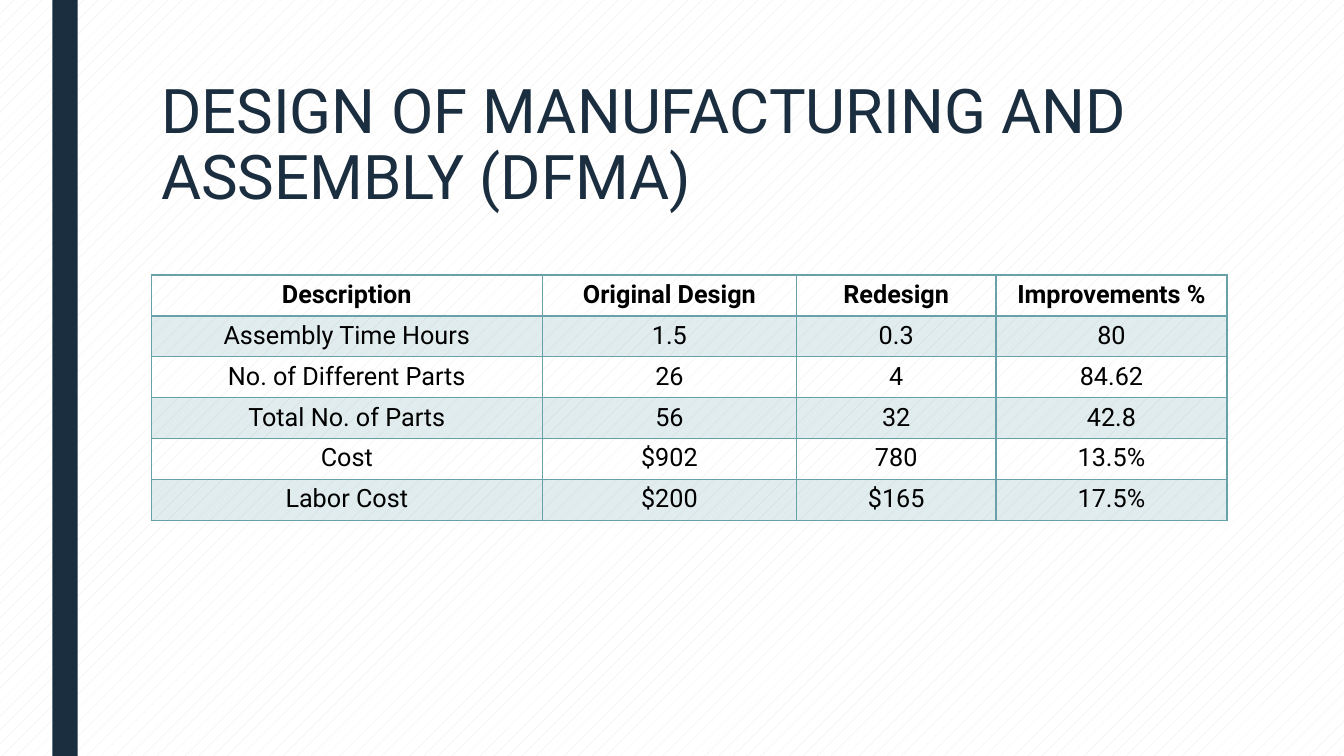
from lxml import etree
from pptx import Presentation
from pptx.dml.color import RGBColor
from pptx.enum.dml import MSO_PATTERN
from pptx.enum.shapes import MSO_SHAPE
from pptx.enum.text import MSO_ANCHOR, MSO_AUTO_SIZE, PP_ALIGN
from pptx.oxml.ns import qn
from pptx.util import Cm, Pt

# Content
TITLE = "DESIGN OF MANUFACTURING AND ASSEMBLY (DFMA)"
ROWS = [
    ("Description", "Original Design", "Redesign", "Improvements %"),
    ("Assembly Time Hours", "1.5", "0.3", "80"),
    ("No. of Different Parts", "26", "4", "84.62"),
    ("Total No. of Parts", "56", "32", "42.8"),
    ("Cost", "$902", "780", "13.5%"),
    ("Labor Cost", "$200", "$165", "17.5%"),
]

# Style, lengths in centimetres
FONT = "Roboto"
NAVY = RGBColor(0x1A, 0x2E, 0x40)
TEAL = RGBColor(0x69, 0xA1, 0xAB)
BLACK = RGBColor(0, 0, 0)
WHITE = RGBColor(0xFF, 0xFF, 0xFF)
SAND = RGBColor(0xEB, 0xE7, 0xDD)
BAND_OPACITY = 20
LEFT = 3.81
TABLE_TOP = 6.93
COLUMN_WIDTHS = (9.86, 6.4, 5.03, 5.82)
ROW_HEIGHT = 1.03
RECTANGLE = MSO_SHAPE.RECTANGLE
DOTS = MSO_PATTERN.PERCENT_5
CENTER = PP_ALIGN.CENTER
TOP = MSO_ANCHOR.TOP
NO_AUTOFIT = MSO_AUTO_SIZE.NONE


def set_font(paragraph, size, color, bold=False):
    font = paragraph.font
    font.name, font.size, font.bold = FONT, Pt(size), bold
    font.color.rgb = color


def add_border(cell, side, width):
    line = etree.SubElement(cell._tc.get_or_add_tcPr(), qn(f"a:ln{side}"), w=str(Pt(width)))
    fill = etree.SubElement(line, qn("a:solidFill"))
    etree.SubElement(fill, qn("a:srgbClr"), val=str(TEAL))


def fill_band(cell):
    cell.fill.solid()
    cell.fill.fore_color.rgb = TEAL
    color = cell._tc.tcPr.find(f".//{qn('a:solidFill')}[last()]/{qn('a:srgbClr')}")
    color = cell._tc.tcPr.find(qn("a:solidFill")).find(qn("a:srgbClr")) if color is None else color
    etree.SubElement(color, qn("a:alpha"), val=str(BAND_OPACITY * 1000))


def format_cell(cell, text, row):
    cell.text = text
    paragraph = cell.text_frame.paragraphs[0]
    paragraph.alignment = CENTER
    set_font(paragraph, 18, BLACK, bold=row == 0)
    # Fill odd rows, then put the borders ahead of the fill as the schema asks
    if row % 2:
        fill_band(cell)
    else:
        cell.fill.background()
    properties = cell._tc.tcPr
    fill = properties[0]
    for side in "LRTB":
        header_rule = (row, side) in ((0, "B"), (1, "T"))
        add_border(cell, side, 2 if header_rule else 1)
    properties.append(fill)


deck = Presentation()
deck.slide_width, deck.slide_height = Cm(33.87), Cm(19.05)
page = deck.slides.add_slide(deck.slide_layouts[5])

# Patterned background
background = page.background.fill
background.patterned()
background.pattern = DOTS
background.fore_color.rgb = SAND
background.back_color.rgb = WHITE

# Side bar
bar = page.shapes.add_shape(RECTANGLE, Cm(1.32), 0, Cm(0.64), deck.slide_height)
bar.shadow.inherit = False
bar.fill.solid()
bar.fill.fore_color.rgb = NAVY
bar.line.fill.background()

# Title
title = page.shapes.title
title.left, title.top, title.width, title.height = Cm(LEFT), Cm(1.91), Cm(26.67), Cm(4.11)
frame = title.text_frame
frame.text = TITLE
frame.word_wrap = True
frame.auto_size = NO_AUTOFIT
frame.vertical_anchor = TOP
heading = frame.paragraphs[0]
heading.alignment = PP_ALIGN.LEFT
heading.line_spacing = 0.89
set_font(heading, 44, NAVY)

# Comparison table
table = page.shapes.add_table(
    len(ROWS), len(COLUMN_WIDTHS), Cm(LEFT), Cm(TABLE_TOP),
    Cm(sum(COLUMN_WIDTHS)), Cm(ROW_HEIGHT * len(ROWS)),
).table
table.horz_banding = False
for column, width in zip(table.columns, COLUMN_WIDTHS):
    column.width = Cm(width)
for row, texts in enumerate(ROWS):
    table.rows[row].height = Cm(ROW_HEIGHT)
    for column, text in enumerate(texts):
        format_cell(table.cell(row, column), text, row)

deck.save("out.pptx")
